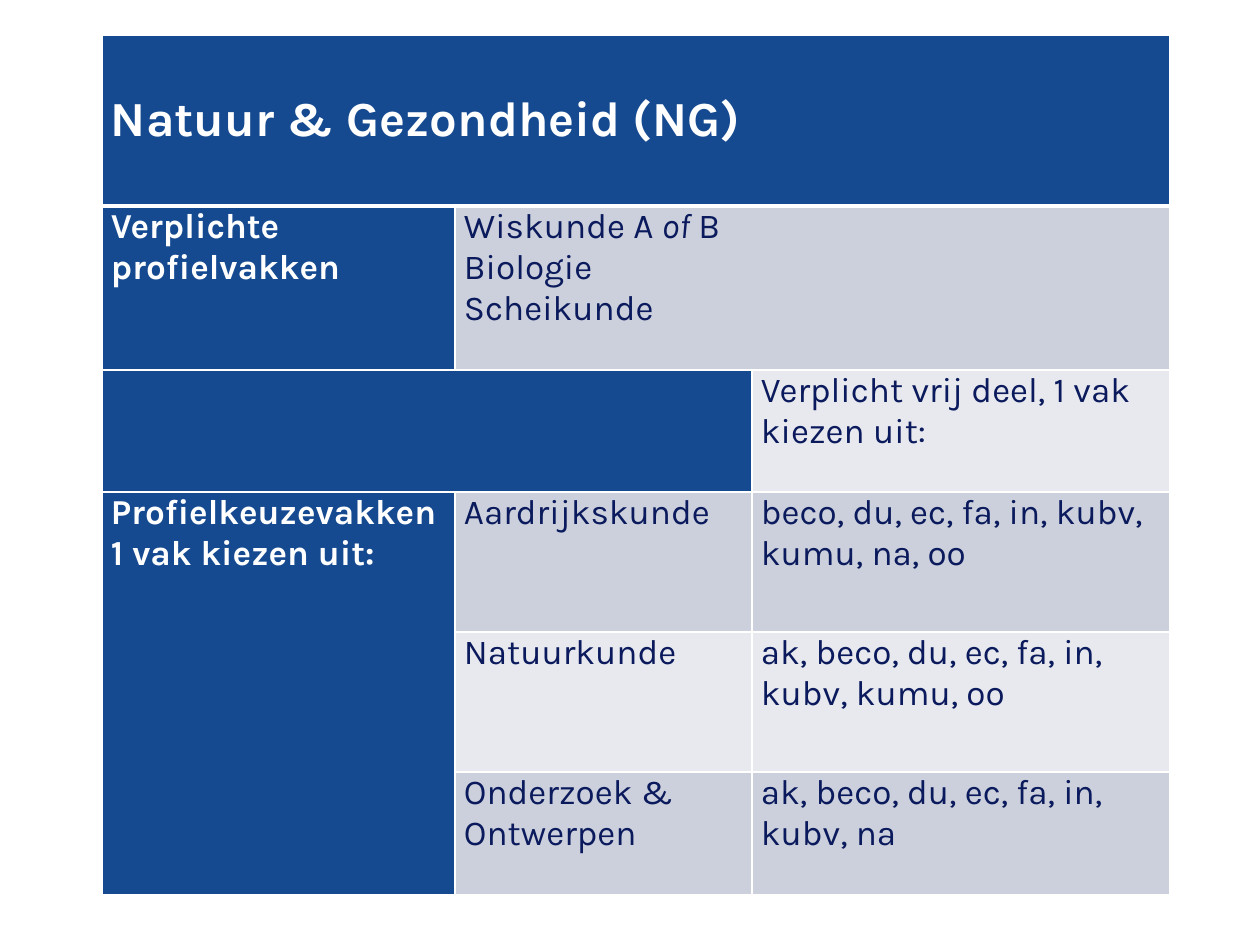
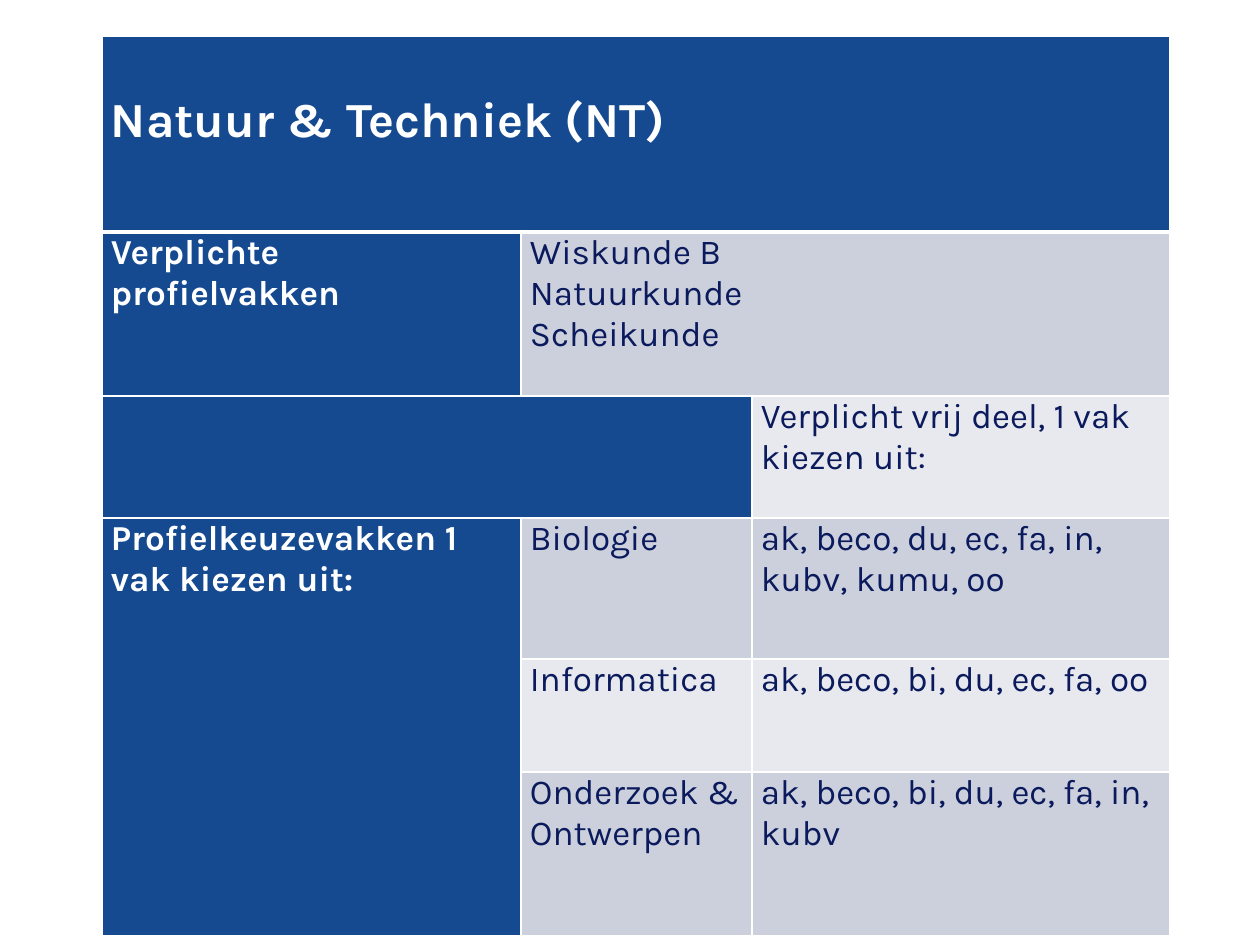
from dataclasses import dataclass

from lxml.etree import SubElement
from pptx import Presentation
from pptx.dml.color import RGBColor
from pptx.enum.text import MSO_ANCHOR
from pptx.oxml.ns import qn
from pptx.util import Emu, Pt

PX_PER_INCH = 126


def px(length: int) -> Emu:
    return Emu(round(length * 914400 / PX_PER_INCH))


@dataclass(frozen=True)
class Theme:
    font: str = "Karla"
    blue: str = "154A91"
    navy: str = "0A1A5C"
    white: str = "FFFFFF"
    dark_band: str = "CCD0DC"
    light_band: str = "E8E9EE"
    title_size: int = 28
    body_size: int = 20
    thin_line: int = 1
    thick_line: int = 3


THEME = Theme()
TABLE_LEFT = 102
CELL_INSET = 9
TITLE_INSET = 57
FREE_CHOICE = "Verplicht vrij deel, 1 vak kiezen uit:"
REQUIRED = "Verplichte profielvakken"
ELECTIVE = "Profielkeuzevakken 1 vak kiezen uit:"


@dataclass(frozen=True)
class Choice:
    subject: str
    free_part: str


@dataclass(frozen=True)
class Profile:
    title: str
    top: int
    columns: tuple[int, ...]
    rows: tuple[int, ...]
    required: tuple[str, ...]  # underscores enclose italic words
    choices: tuple[Choice, ...]


PROFILES = (
    Profile(
        "Natuur & Gezondheid (NG)", 35,
        (353, 297, 418), (171, 164, 122, 140, 140, 123),
        ("Wiskunde A _of_ B", "Biologie", "Scheikunde"),
        (
            Choice("Aardrijkskunde", "beco, du, ec, fa, in, kubv, kumu, na, oo"),
            Choice("Natuurkunde", "ak, beco, du, ec, fa, in, kubv, kumu, oo"),
            Choice("Onderzoek & Ontwerpen", "ak, beco, du, ec, fa, in, kubv, na"),
        ),
    ),
    Profile(
        "Natuur & Techniek (NT)", 36,
        (419, 231, 418), (196, 164, 122, 141, 113, 164),
        ("Wiskunde B", "Natuurkunde", "Scheikunde"),
        (
            Choice("Biologie", "ak, beco, du, ec, fa, in, kubv, kumu, oo"),
            Choice("Informatica", "ak, beco, bi, du, ec, fa, oo"),
            Choice("Onderzoek & Ontwerpen", "ak, beco, bi, du, ec, fa, in, kubv"),
        ),
    ),
)


def write_span(para, text: str, *, size: int, color: str,
               bold: bool = False, italic: bool = False) -> None:
    span = para.add_run()
    span.text = text
    font = span.font
    font.name, font.size = THEME.font, Pt(size)
    font.bold, font.italic = bold, italic
    font.color.rgb = RGBColor.from_string(color)


def set_borders(cell, row: int) -> None:
    """White rules, thicker between the title row and the body."""
    thick_side = {0: "lnB", 1: "lnT"}.get(row)
    properties = cell._tc.get_or_add_tcPr()
    for side in ("lnL", "lnR", "lnT", "lnB"):
        width = THEME.thick_line if side == thick_side else THEME.thin_line
        line = SubElement(properties, qn(f"a:{side}"), w=str(Pt(width)))
        fill = SubElement(line, qn("a:solidFill"))
        SubElement(fill, qn("a:srgbClr"), val=THEME.white)


def fill_cell(cell, color: str) -> None:
    cell.fill.solid()
    cell.fill.fore_color.rgb = RGBColor.from_string(color)


def write_cell(cell, *lines: str, size: int = THEME.body_size,
               heading: bool = False, top: int = 0) -> None:
    cell.margin_left = cell.margin_right = px(CELL_INSET)
    cell.margin_top, cell.margin_bottom = px(top), 0
    cell.vertical_anchor = MSO_ANCHOR.TOP
    color = THEME.white if heading else THEME.navy
    frame = cell.text_frame
    for index, line in enumerate(lines):
        para = frame.add_paragraph() if index else frame.paragraphs[0]
        for part, text in enumerate(line.split("_")):
            write_span(para, text, size=size, color=color,
                       bold=heading, italic=part % 2 == 1)


def add_profile_slide(deck, profile: Profile) -> None:
    slide = deck.slides.add_slide(deck.slide_layouts[6])
    table = slide.shapes.add_table(
        len(profile.rows), len(profile.columns), px(TABLE_LEFT), px(profile.top),
        px(sum(profile.columns)), px(sum(profile.rows))).table
    for column, width in zip(table.columns, profile.columns):
        column.width = px(width)
    for row, height in zip(table.rows, profile.rows):
        row.height = px(height)

    # Blue headings and alternating bands
    for row in range(len(profile.rows)):
        band = THEME.dark_band if row % 2 else THEME.light_band
        blue_columns = {0: 3, 2: 2}.get(row, 1)
        for column in range(len(profile.columns)):
            cell = table.cell(row, column)
            set_borders(cell, row)
            fill_cell(cell, THEME.blue if column < blue_columns else band)

    # Merged areas
    for first, last in (((0, 0), (0, 2)), ((1, 1), (1, 2)),
                        ((2, 0), (2, 1)), ((3, 0), (5, 0))):
        table.cell(*first).merge(table.cell(*last))

    # Headings and subjects
    write_cell(table.cell(0, 0), profile.title, size=THEME.title_size,
               heading=True, top=TITLE_INSET)
    write_cell(table.cell(1, 0), REQUIRED, heading=True)
    write_cell(table.cell(1, 1), *profile.required)
    write_cell(table.cell(2, 2), FREE_CHOICE)
    write_cell(table.cell(3, 0), ELECTIVE, heading=True)
    for row, choice in enumerate(profile.choices, start=3):
        write_cell(table.cell(row, 1), choice.subject)
        write_cell(table.cell(row, 2), choice.free_part)


def main() -> None:
    deck = Presentation()
    deck.slide_width, deck.slide_height = px(1260), px(945)
    for profile in PROFILES:
        add_profile_slide(deck, profile)
    deck.save("out.pptx")


if __name__ == "__main__":
    main()
